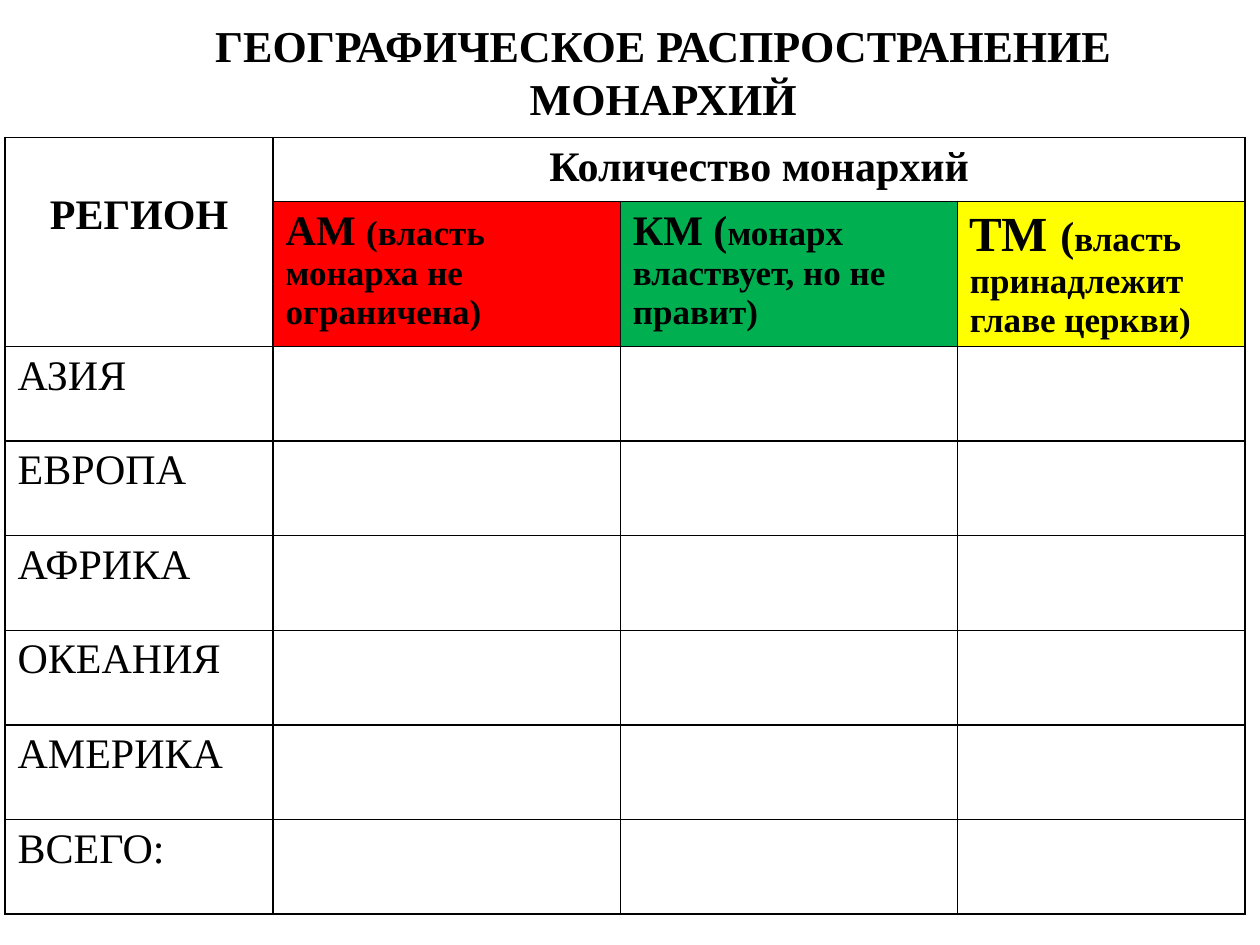
from lxml.etree import SubElement
from pptx import Presentation
from pptx.dml.color import RGBColor
from pptx.enum.text import MSO_ANCHOR, PP_ALIGN
from pptx.oxml.ns import qn
from pptx.util import Pt

FONT = "Times New Roman"
BLACK = RGBColor(0, 0, 0)
WHITE = RGBColor(255, 255, 255)
RED = RGBColor(255, 0, 0)
GREEN = RGBColor(0, 176, 80)
YELLOW = RGBColor(255, 255, 0)

COLS = [153.2, 198.4, 192.6, 164.4]
ROWS = [36.6, 82.8] + [54.1] * 6
TYPES = [
    (RED, [("АМ ", 24), ("(власть монарха не ограничена)", 20)]),
    (GREEN, [("КМ (", 24), ("монарх властвует, но не правит)", 20)]),
    (YELLOW, [("ТМ ", 28), ("(", 24), ("власть принадлежит главе церкви)", 20)]),
]
REGIONS = ["АЗИЯ", "ЕВРОПА", "АФРИКА", "ОКЕАНИЯ", "АМЕРИКА", "ВСЕГО:"]


def style(p, bold, align=PP_ALIGN.LEFT):
    """Set the shared font and alignment of a paragraph."""
    p.alignment = align
    p.font.name, p.font.bold = FONT, bold
    p.font.color.rgb = BLACK


def add_title(s, text):
    """Fill and place the title placeholder."""
    sp = s.shapes.title
    sp.left, sp.top, sp.width, sp.height = Pt(54), Pt(9.4), Pt(650), Pt(62.6)
    tf = sp.text_frame
    tf.word_wrap = True
    tf.vertical_anchor = MSO_ANCHOR.MIDDLE
    p = tf.paragraphs[0]
    p.text = text
    style(p, True, PP_ALIGN.CENTER)
    p.font.size = Pt(25.2)


def format_cell(cell):
    """Give a cell thin black borders and a white fill."""
    tcPr = cell._tc.get_or_add_tcPr()
    for side in ("lnL", "lnR", "lnT", "lnB"):
        ln = SubElement(tcPr, qn(f"a:{side}"), w=str(Pt(1)))
        fill = SubElement(ln, qn("a:solidFill"))
        SubElement(fill, qn("a:srgbClr"), val=str(BLACK))
    cell.fill.solid()
    cell.fill.fore_color.rgb = WHITE


def write_cell(cell, runs, bold=True, align=PP_ALIGN.LEFT):
    """Write (text, size) runs into a cell."""
    p = cell.text_frame.paragraphs[0]
    style(p, bold, align)
    for text, size in runs:
        r = p.add_run()
        r.text = text
        r.font.size = Pt(size)
        r.font.name, r.font.bold = FONT, bold
        r.font.color.rgb = BLACK


def add_grid(s):
    """Add the empty bordered table."""
    table = s.shapes.add_table(len(ROWS), len(COLS), Pt(2.9), Pt(78.5),
                               Pt(sum(COLS)), Pt(sum(ROWS))).table
    table.first_row = table.horz_banding = False
    for col, width in zip(table.columns, COLS):
        col.width = Pt(width)
    for row, height in zip(table.rows, ROWS):
        row.height = Pt(height)
    for cell in table.iter_cells():
        format_cell(cell)
    return table


def fill_table(table):
    """Merge the header cells and write the headings and regions."""
    region, count = table.cell(0, 0), table.cell(0, 1)
    region.merge(table.cell(1, 0))
    count.merge(table.cell(0, 3))
    region.margin_top = Pt(31.2)
    write_cell(region, [("РЕГИОН", 24)], align=PP_ALIGN.CENTER)
    write_cell(count, [("Количество монархий", 24)], align=PP_ALIGN.CENTER)
    for i, (color, runs) in enumerate(TYPES, 1):
        cell = table.cell(1, i)
        cell.fill.fore_color.rgb = color
        write_cell(cell, runs)
    for i, name in enumerate(REGIONS, 2):
        write_cell(table.cell(i, 0), [(name, 24)], bold=False)


def main():
    """Build and save the slide."""
    prs = Presentation()
    prs.slide_width, prs.slide_height = Pt(720), Pt(540)
    s = prs.slides.add_slide(prs.slide_layouts[5])
    add_title(s, "ГЕОГРАФИЧЕСКОЕ РАСПРОСТРАНЕНИЕ МОНАРХИЙ")
    fill_table(add_grid(s))
    prs.save("out.pptx")


if __name__ == "__main__":
    main()
